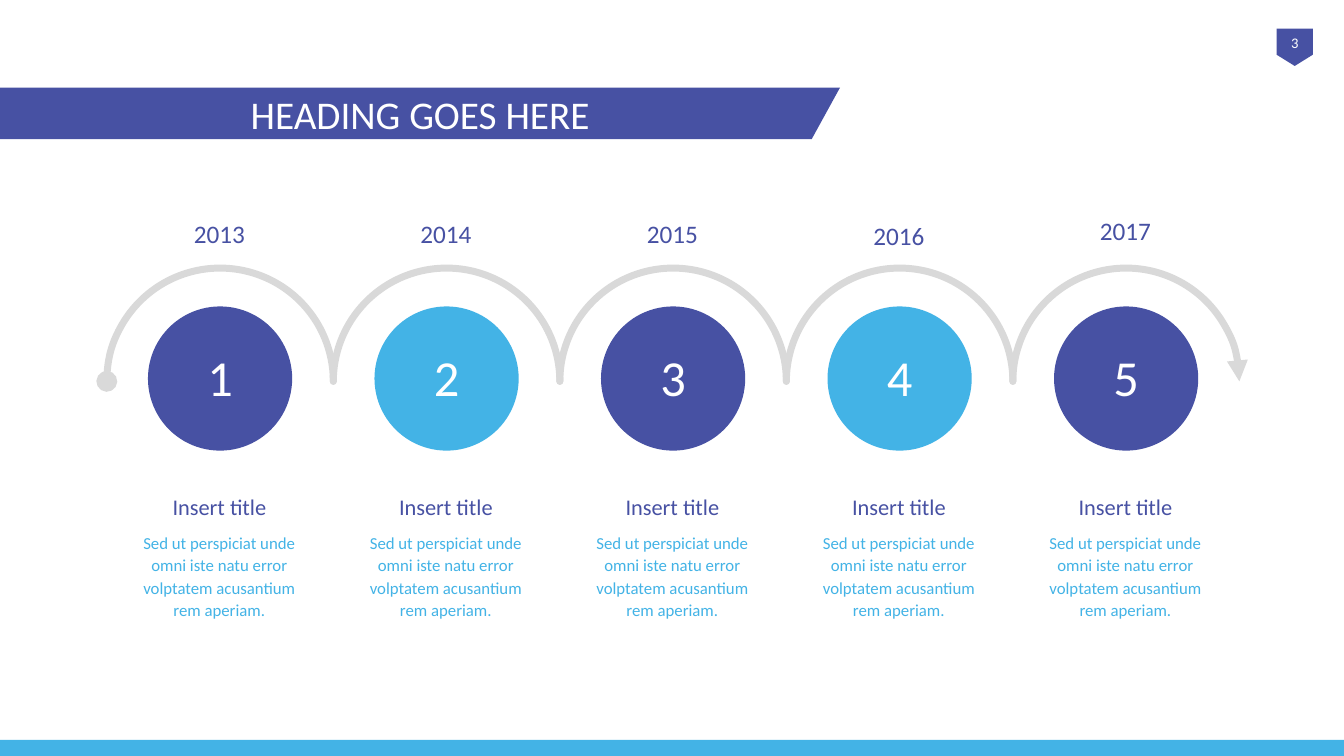
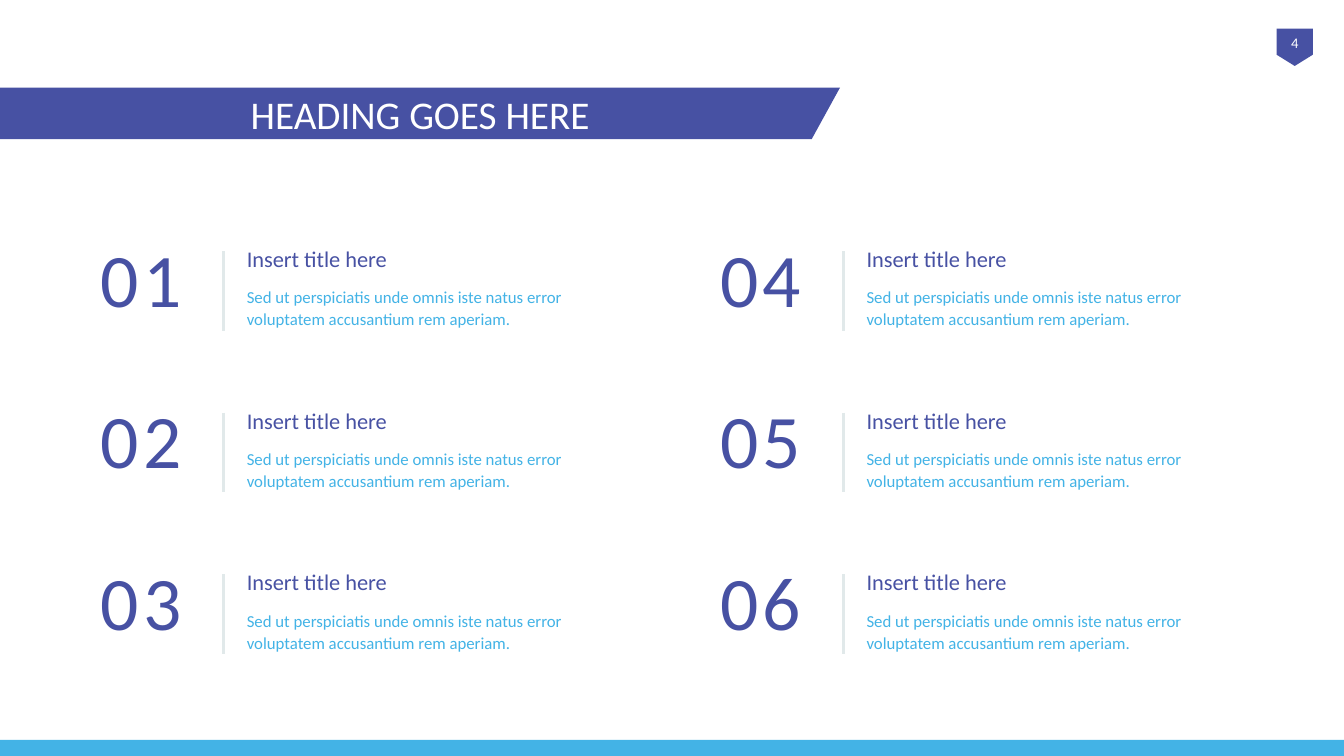
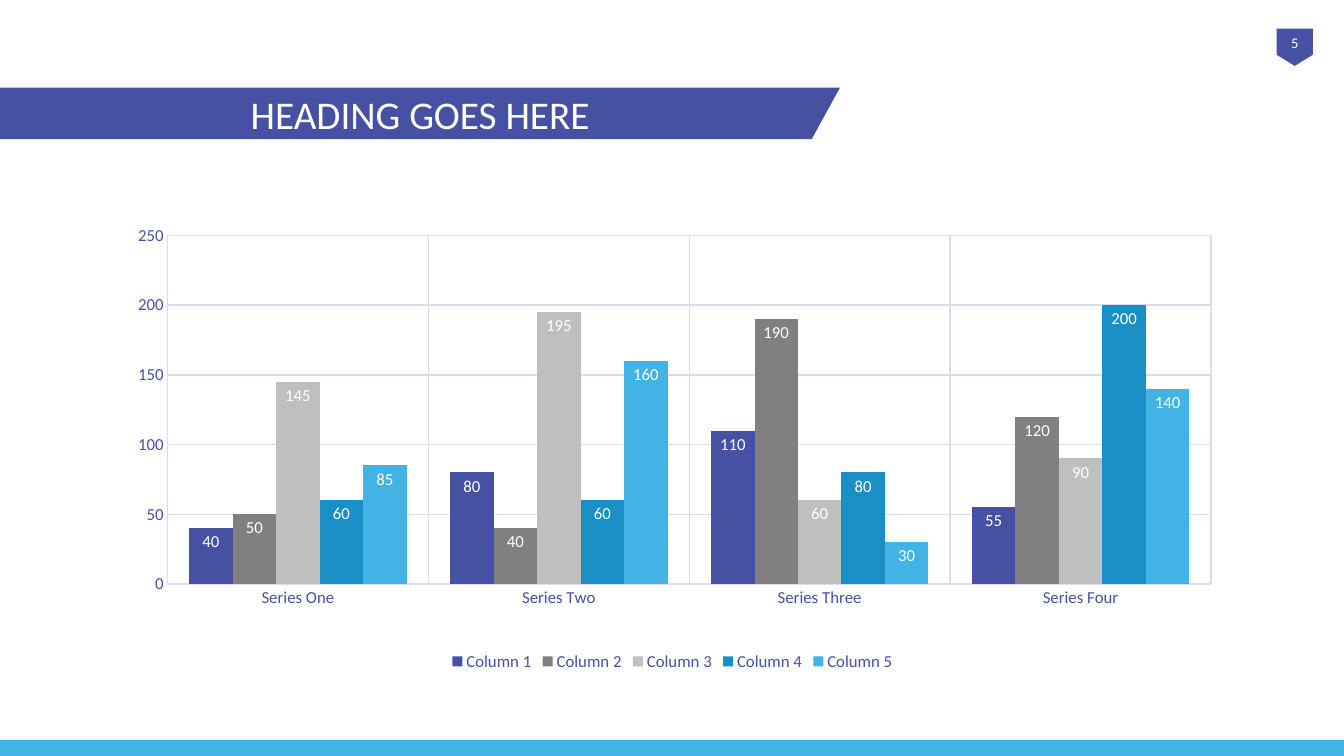
from pptx import Presentation
from pptx.chart.data import CategoryChartData
from pptx.dml.color import RGBColor
from pptx.enum.chart import XL_CHART_TYPE, XL_LABEL_POSITION, XL_LEGEND_POSITION, XL_TICK_MARK
from pptx.enum.shapes import MSO_CONNECTOR, MSO_SHAPE
from pptx.enum.text import MSO_ANCHOR, MSO_AUTO_SIZE, PP_ALIGN
from pptx.oxml import parse_xml
from pptx.oxml.ns import nsdecls, qn
from pptx.util import Pt

CENTER, LEFT = PP_ALIGN.CENTER, PP_ALIGN.LEFT
MIDDLE = MSO_ANCHOR.MIDDLE
GROW, FIXED = MSO_AUTO_SIZE.SHAPE_TO_FIT_TEXT, MSO_AUTO_SIZE.NONE
PENTAGON, RECTANGLE = MSO_SHAPE.PENTAGON, MSO_SHAPE.RECTANGLE
ARC, OVAL = MSO_SHAPE.ARC, MSO_SHAPE.OVAL
STRAIGHT = MSO_CONNECTOR.STRAIGHT
CLUSTERED = XL_CHART_TYPE.COLUMN_CLUSTERED
INSIDE_END = XL_LABEL_POSITION.INSIDE_END
BOTTOM = XL_LEGEND_POSITION.BOTTOM
NO_TICK = XL_TICK_MARK.NONE

FONT = "Calibri"
COLORS = {
    "indigo": "4751A3",
    "sky": "43B3E6",
    "ocean": "1A8FC5",
    "white": "FFFFFF",
    "track": "D9D9D9",
    "divider": "E1E9EA",
    "grid": "D9DBEE",
    "gray": "808080",
    "silver": "BFBFBF",
}

LABEL_FRAME = {"word_wrap": False, "auto_size": GROW}
PROSE_FRAME = {"word_wrap": True, "auto_size": GROW}
STYLES = {
    "heading": {
        "size": 28, "color": "white", "paragraph": {"alignment": CENTER},
        "frame": {"word_wrap": True, "auto_size": FIXED, "vertical_anchor": MIDDLE,
                  "margin_top": 0, "margin_bottom": 0},
    },
    "page": {
        "size": 10.5, "color": "white", "paragraph": {"alignment": CENTER},
        "frame": {"word_wrap": True, "auto_size": FIXED},
    },
    "year": {
        "size": 18, "color": "indigo", "paragraph": {"alignment": CENTER},
        "frame": LABEL_FRAME,
    },
    "step": {
        "size": 36, "color": "white", "paragraph": {"alignment": CENTER},
        "frame": {"word_wrap": False, "vertical_anchor": MIDDLE,
                  "margin_top": 0, "margin_bottom": Pt(2.8)},
    },
    "step title": {
        "size": 16, "color": "indigo", "paragraph": {"alignment": CENTER},
        "frame": LABEL_FRAME,
    },
    "step detail": {
        "size": 12, "color": "sky", "frame": PROSE_FRAME,
        "paragraph": {"alignment": CENTER, "line_spacing": 1.1},
    },
    "item number": {
        "size": 54, "color": "indigo", "paragraph": {"alignment": LEFT}, "spacing": 3,
        "frame": {**LABEL_FRAME, "margin_top": 0, "margin_bottom": 0},
    },
    "item title": {
        "size": 16, "color": "indigo", "paragraph": {"alignment": LEFT},
        "frame": LABEL_FRAME,
    },
    "item detail": {
        "size": 12, "color": "sky", "frame": PROSE_FRAME,
        "paragraph": {"alignment": LEFT, "line_spacing": 1.1},
    },
}

HEADING = "HEADING GOES HERE"
FIRST_PAGE = 3
BAND_TOP, BAND_WIDTH, BAND_HEIGHT, BAND_SLANT = 62.6, 600, 36.8, 20.2

YEARS = [("2013", 152.6), ("2014", 152.6), ("2015", 152.6), ("2016", 154.1), ("2017", 150.5)]
STEP_DETAIL = "Sed ut perspiciat unde omni iste natu error volptatem acusantium rem aperiam."
STEP_PITCH = 161.8
ITEM_DETAIL = ("Sed ut perspiciatis unde omnis iste natus error "
               "voluptatem accusantium rem aperiam.")
ITEM_ROWS, ITEM_COLUMNS = 3, 2

CATEGORIES = ["Series One", "Series Two", "Series Three", "Series Four"]
SERIES = [
    ("Column 1", [40, 80, 110, 55], "indigo"),
    ("Column 2", [50, 40, 190, 120], "gray"),
    ("Column 3", [145, 195, 60, 90], "silver"),
    ("Column 4", [60, 60, 80, 200], "ocean"),
    ("Column 5", [85, 160, 30, 140], "sky"),
]
PLOT_BOX = {"x": 0.052, "y": 0.085, "w": 0.926, "h": 0.725}


def rgb(color):
    """Return the palette colour of that name."""
    return RGBColor.from_string(COLORS[color])


def points(*lengths):
    """Convert numbers to point lengths."""
    return [Pt(length) for length in lengths]


def set_all(target, values):
    """Set every attribute named in values on target."""
    for name, value in values.items():
        setattr(target, name, value)


def style_font(font, size, color):
    """Apply the deck typeface with a size and palette colour."""
    set_all(font, {"name": FONT, "size": Pt(size)})
    font.color.rgb = rgb(color)


def style_line(line, color, width):
    """Give a line a palette colour and a width."""
    line.color.rgb = rgb(color)
    line.width = Pt(width)


def write(shape, text, style_name):
    """Write text into a shape in a named style."""
    style = STYLES[style_name]
    frame = shape.text_frame
    set_all(frame, style["frame"])
    paragraph = frame.paragraphs[0]
    set_all(paragraph, style["paragraph"])
    run = paragraph.add_run()
    run.text = text
    style_font(run.font, style["size"], style["color"])
    if "spacing" in style:
        for properties in shape.element.iter(qn("a:rPr")):
            properties.set("spc", str(style["spacing"] * 100))


def add_text(slide, text, box, style_name):
    """Add a text box in a named style."""
    write(slide.shapes.add_textbox(*points(*box)), text, style_name)


def paint(shape, color):
    """Fill a shape flat, with no outline or shadow."""
    shape.shadow.inherit = False
    shape.fill.solid()
    shape.fill.fore_color.rgb = rgb(color)
    shape.line.fill.background()
    return shape


def add_filled(slide, kind, box, color):
    """Add a flat preset shape."""
    return paint(slide.shapes.add_shape(kind, *points(*box)), color)


def add_heading_band(slide):
    """Add the slanted band behind the heading."""
    bottom = BAND_TOP + BAND_HEIGHT
    builder = slide.shapes.build_freeform(0, Pt(BAND_TOP), scale=1.0)
    corners = [(BAND_WIDTH, BAND_TOP), (BAND_WIDTH - BAND_SLANT, bottom), (0, bottom)]
    builder.add_line_segments([points(*corner) for corner in corners], close=True)
    return paint(builder.convert_to_shape(), "indigo")


def add_arc(slide, box, ends):
    """Add a half-circle track with optional line ends."""
    arc = slide.shapes.add_shape(ARC, *points(*box))
    arc.adjustments[0], arc.adjustments[1] = 108, 0
    arc.shadow.inherit = False
    arc.fill.background()
    style_line(arc.line, "track", 5)
    outline = arc.element.spPr.find(qn("a:ln"))
    outline.set("cap", "rnd")
    for end, kind in ends.items():
        outline.append(parse_xml(f'<a:{end} {nsdecls("a")} type="{kind}"/>'))


def add_divider(slide, x, top, bottom):
    """Add a vertical divider line."""
    divider = slide.shapes.add_connector(STRAIGHT, *points(x, top, x, bottom))
    style_line(divider.line, "divider", 2)
    divider.element.spPr.append(parse_xml(f'<a:effectLst {nsdecls("a")}/>'))


def prepare_layout(layout, slide):
    """Place the shared band, badge, footer and heading on the layout."""
    for placeholder in list(layout.placeholders):
        if placeholder.placeholder_format.idx:
            layout.shapes.element.remove(placeholder.element)
    left, top, width, height = points(0, BAND_TOP, BAND_WIDTH, BAND_HEIGHT)
    set_all(layout.placeholders[0], {"left": left, "top": top, "width": width, "height": height})
    badge = add_filled(slide, PENTAGON, (911.5, 20.9, 26.6, 25.9), "indigo")
    badge.rotation = 90
    badge.adjustments[0] = 0.31
    footer = add_filled(slide, RECTANGLE, (0, 528.5, 960, 11.5), "sky")
    for part in (badge, footer, add_heading_band(slide)):
        layout.shapes.element.append(part.element)


def add_heading(slide, page):
    """Write the heading and the page number."""
    write(slide.shapes.title, HEADING, "heading")
    add_text(slide, str(page), (910.8, 20.9, 28.1, 20.9), "page")


def fill_timeline(slide):
    """Build the five-step timeline."""
    for index, (year, year_top) in enumerate(YEARS):
        left = 76.3 + index * STEP_PITCH
        middle = left + STEP_PITCH / 2 - 0.5
        ends = {}
        if index == 0:
            ends["headEnd"] = "oval"
        if index == len(YEARS) - 1:
            ends["tailEnd"] = "triangle"
        add_arc(slide, (left, 191.5, STEP_PITCH, STEP_PITCH), ends)
        add_text(slide, year, (middle - 25.5, year_top, 51, 28.8), "year")
        color = "sky" if index % 2 else "indigo"
        circle = add_filled(slide, OVAL, (middle - 51, 218.9, 103, 103), color)
        write(circle, str(index + 1), "step")
        add_text(slide, "Insert title", (middle - 41.4, 348.5, 82.8, 26.6), "step title")
        add_text(slide, STEP_DETAIL, (middle - 67.3, 375.8, 134.6, 71.3), "step detail")


def fill_items(slide):
    """Build the grid of numbered items."""
    for index in range(ITEM_ROWS * ITEM_COLUMNS):
        column, row = divmod(index, ITEM_ROWS)
        left, top = 64.8 + column * 442.7, 165.5 + row * 115.5
        add_text(slide, f"{index + 1:02d}", (left, top, 75.6, 65.5), "item number")
        add_text(slide, "Insert title here", (left + 104.4, top + 6, 116, 26.6), "item title")
        add_text(slide, ITEM_DETAIL, (left + 104.4, top + 34.5, 260.6, 39.6), "item detail")
        add_divider(slide, left + 95, top + 13.8, top + 70.7)


def style_axis(axis):
    """Give an axis labels and gridlines but no line or ticks."""
    set_all(axis, {"has_major_gridlines": True, "major_tick_mark": NO_TICK,
                   "minor_tick_mark": NO_TICK})
    style_line(axis.major_gridlines.format.line, "grid", 1)
    axis.format.line.fill.background()
    style_font(axis.tick_labels.font, 12, "indigo")


def place_plot(chart):
    """Fix the inner plot area inside the chart."""
    area = chart.element.find(".//" + qn("c:plotArea"))
    for layout in area.findall(qn("c:layout")):
        area.remove(layout)
    modes = "".join(f'<c:{side}Mode val="edge"/>' for side in "xy")
    extents = "".join(f'<c:{side} val="{value}"/>' for side, value in PLOT_BOX.items())
    area.insert(0, parse_xml(
        f'<c:layout {nsdecls("c")}><c:manualLayout><c:layoutTarget val="inner"/>'
        f'{modes}{extents}</c:manualLayout></c:layout>'))


def fill_chart(slide):
    """Build the clustered column chart."""
    data = CategoryChartData()
    data.categories = CATEGORIES
    for name, values, _ in SERIES:
        data.add_series(name, values)
    box = points(77.8, 139, 805, 343.4)
    chart = slide.shapes.add_chart(CLUSTERED, *box, data).chart
    set_all(chart, {"has_title": False, "has_legend": True})
    style_font(chart.font, 10, "indigo")
    set_all(chart.legend, {"position": BOTTOM, "include_in_layout": False})
    style_font(chart.legend.font, 12, "indigo")
    for axis in (chart.category_axis, chart.value_axis):
        style_axis(axis)
    set_all(chart.value_axis, {"minimum_scale": 0, "maximum_scale": 250, "major_unit": 50})
    plot = chart.plots[0]
    set_all(plot, {"gap_width": 100, "overlap": 0, "vary_by_categories": False})
    for series, (_, _, color) in zip(plot.series, SERIES):
        series.format.fill.solid()
        series.format.fill.fore_color.rgb = rgb(color)
        labels = series.data_labels
        set_all(labels, {"show_value": True, "position": INSIDE_END})
        style_font(labels.font, 12, "white")
    place_plot(chart)


def main():
    """Build and save the deck."""
    deck = Presentation()
    set_all(deck, {"slide_width": Pt(960), "slide_height": Pt(540)})
    layout = deck.slide_layouts[5]
    fillers = (fill_timeline, fill_items, fill_chart)
    slides = [deck.slides.add_slide(layout) for _ in fillers]
    prepare_layout(layout, slides[0])
    for page, (slide, fill) in enumerate(zip(slides, fillers), FIRST_PAGE):
        add_heading(slide, page)
        fill(slide)
    deck.save("out.pptx")


if __name__ == "__main__":
    main()
